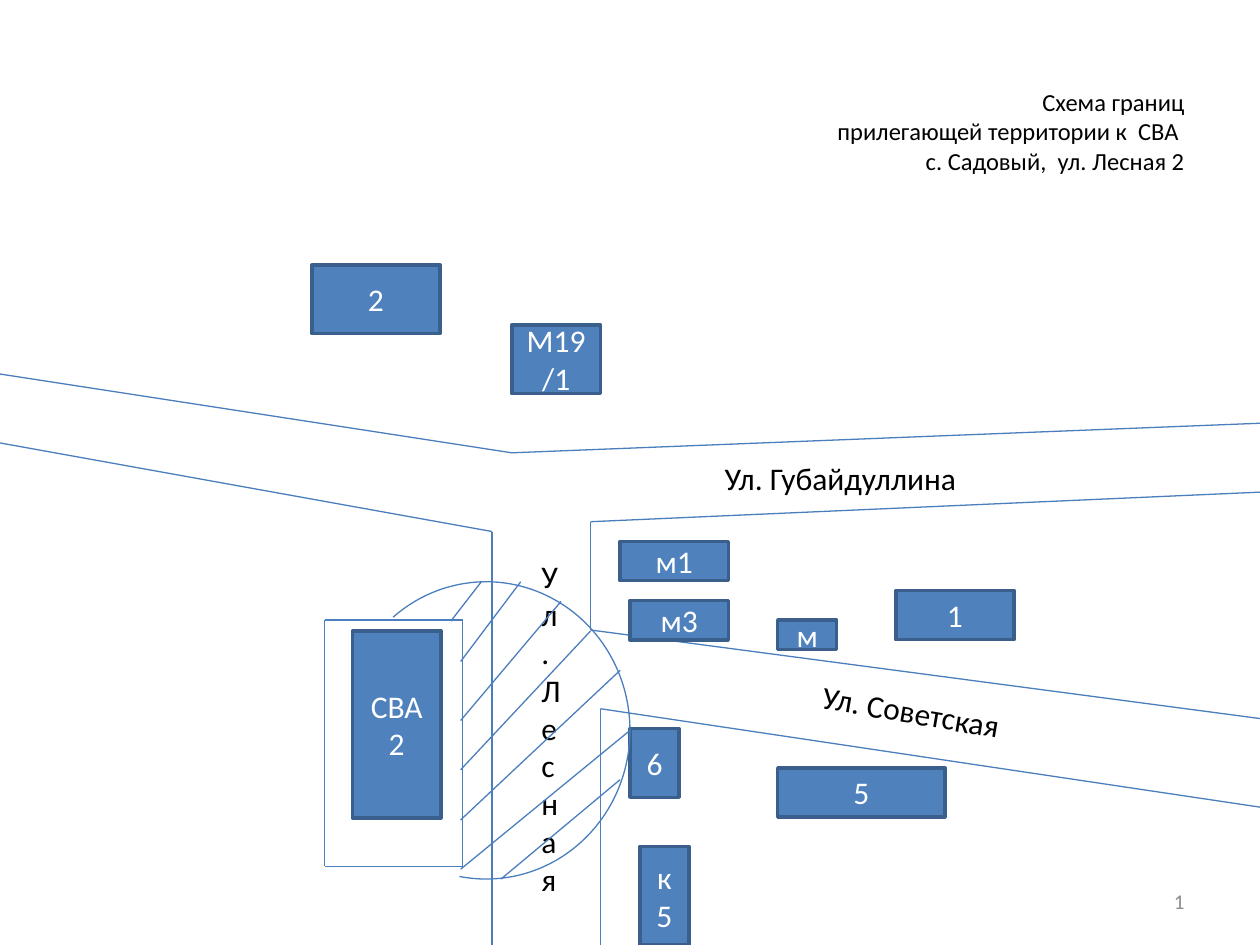
from lxml import etree
from pptx import Presentation, util as u
from pptx.dml.color import RGBColor
from pptx.enum import shapes, text
from pptx.oxml.ns import qn

HUES = {"fill": "4F81BD", "edge": "3A5F8C", "line": "4B7EBC",
        "ink": "000000", "pale": "FFFFFF", "grey": "8C8C8C"}
COLS, ROWS = 128, 96
WIDE, HIGH = 10, 7.5


class Plan:
    """Style and current slide; every length is in grid columns and rows."""
    font = "Calibri"

    def __init__(self, deck):
        self.slide = deck.slides.add_slide(deck.slide_layouts[6])
        self.items = self.slide.shapes

    def grid(self, *nums):
        """Turn alternating columns and rows into lengths."""
        steps = (WIDE / COLS, HIGH / ROWS)
        return [u.Inches(n * steps[i % 2]) for i, n in enumerate(nums)]

    def hue(self, name):
        return RGBColor.from_string(HUES[name])

    def words(self, frame, string, size, hue, align):
        frame.word_wrap = True
        frame.text = string
        for para in frame.paragraphs:
            para.alignment = align
            para.font.size = u.Pt(size)
            para.font.name = self.font
            para.font.color.rgb = self.hue(hue)

    def label(self, box, string, size=18, hue="ink", align=text.PP_ALIGN.LEFT,
              mid=False, left=0.1, top=0.05, turn=0):
        item = self.items.add_textbox(*self.grid(*box))
        item.rotation = turn
        frame = item.text_frame
        self.words(frame, string, size, hue, align)
        frame.margin_left, frame.margin_top = u.Inches(left), u.Inches(top)
        if mid:
            frame.vertical_anchor = text.MSO_ANCHOR.MIDDLE

    def house(self, box, string):
        item = self.items.add_shape(shapes.MSO_SHAPE.RECTANGLE, *self.grid(*box))
        item.shadow.inherit = False
        item.fill.solid()
        item.fill.fore_color.rgb = self.hue("fill")
        item.line.color.rgb = self.hue("edge")
        item.line.width = u.Pt(2)
        self.words(item.text_frame, string, 18, "pale", text.PP_ALIGN.CENTER)
        item.text_frame.vertical_anchor = text.MSO_ANCHOR.MIDDLE

    def thin(self, item):
        item.line.color.rgb = self.hue("line")
        item.line.width = u.Pt(0.75)

    def lines(self, *points):
        """Straight lines from point to point."""
        for start, end in zip(points, points[1:]):
            item = self.items.add_connector(
                shapes.MSO_CONNECTOR.STRAIGHT, *self.grid(*start, *end))
            self.thin(item)
            etree.SubElement(item._element.spPr, qn("a:effectLst"))

    def arc(self, box, start, end):
        """Arc between two angles in degrees, clockwise."""
        item = self.items.add_shape(shapes.MSO_SHAPE.ARC, *self.grid(*box))
        item.shadow.inherit = False
        item.fill.background()
        self.thin(item)
        for i, angle in enumerate((start, end)):
            item.adjustments[i] = angle * 0.6


def main():
    deck = Presentation()
    deck.slide_width, deck.slide_height = u.Inches(WIDE), u.Inches(HIGH)
    plan = Plan(deck)
    right = text.PP_ALIGN.RIGHT

    # Title
    plan.label((6.4, 3.84, 115.2, 16),
               "Схема границ\vприлегающей территории к  СВА \v"
               "с. Садовый,  ул. Лесная 2",
               size=14, align=right, mid=True, top=0.28)

    # Road edges
    plan.lines((0, 38), (52, 46), (128, 43))
    plan.lines((0, 45), (50, 54), (50, 96))
    plan.lines((128, 50), (60, 53), (60, 64), (128, 73))
    plan.lines((61, 96), (61, 72), (128, 82))

    # Street names
    plan.label((63, 46, 54, 5.2), "Ул. Губайдуллина", left=0.83)
    plan.label((55, 56, 1, 36.2), "Ул.Лесная")
    plan.label((61.3, 68.5, 48.4, 5.2), "Ул. Советская", left=1.74, turn=9.6)

    # Houses
    for box, string in [
        ((63, 55, 11, 4), "м1"), ((64, 61, 10, 4), "м3"),
        ((79, 63, 6, 3), "м"), ((91, 60, 12, 5), "1"),
        ((79, 78, 17, 5), "5"), ((64, 74, 5, 7), "6"),
        ((65, 86, 5, 10), "к5"), ((35.8, 64.1, 9, 19), "СВА\n2"),
        ((52, 33, 9, 7), "М19/1"), ((31.7, 26.9, 13, 7), "2"),
    ]:
        plan.house(box, string)

    # Plot around the clinic
    plan.lines((33, 63), (47, 63), (47, 88), (33, 88), (33, 63))

    # Slide number
    plan.label((91.8, 89, 29.8, 5.1), "1", size=12, hue="grey",
               align=right, mid=True)

    # Hatched zone
    plan.arc((34.8, 59.1, 29.2, 30.2), 230.55, 100.42)
    edge = 46.8
    for start, end in [
        ((48.9, 59.1), (45.8, 63.1)), ((52.9, 59.1), (edge, 67.2)),
        ((57, 61.1), (edge, 73.2)), ((60, 64.1), (edge, 78.2)),
        ((63, 68.1), (edge, 83.3)), ((64, 74.2), (edge, 88.3)),
        ((63, 79.2), (50.9, 89.3)),
    ]:
        plan.lines(start, end)

    deck.save("out.pptx")


if __name__ == "__main__":
    main()
